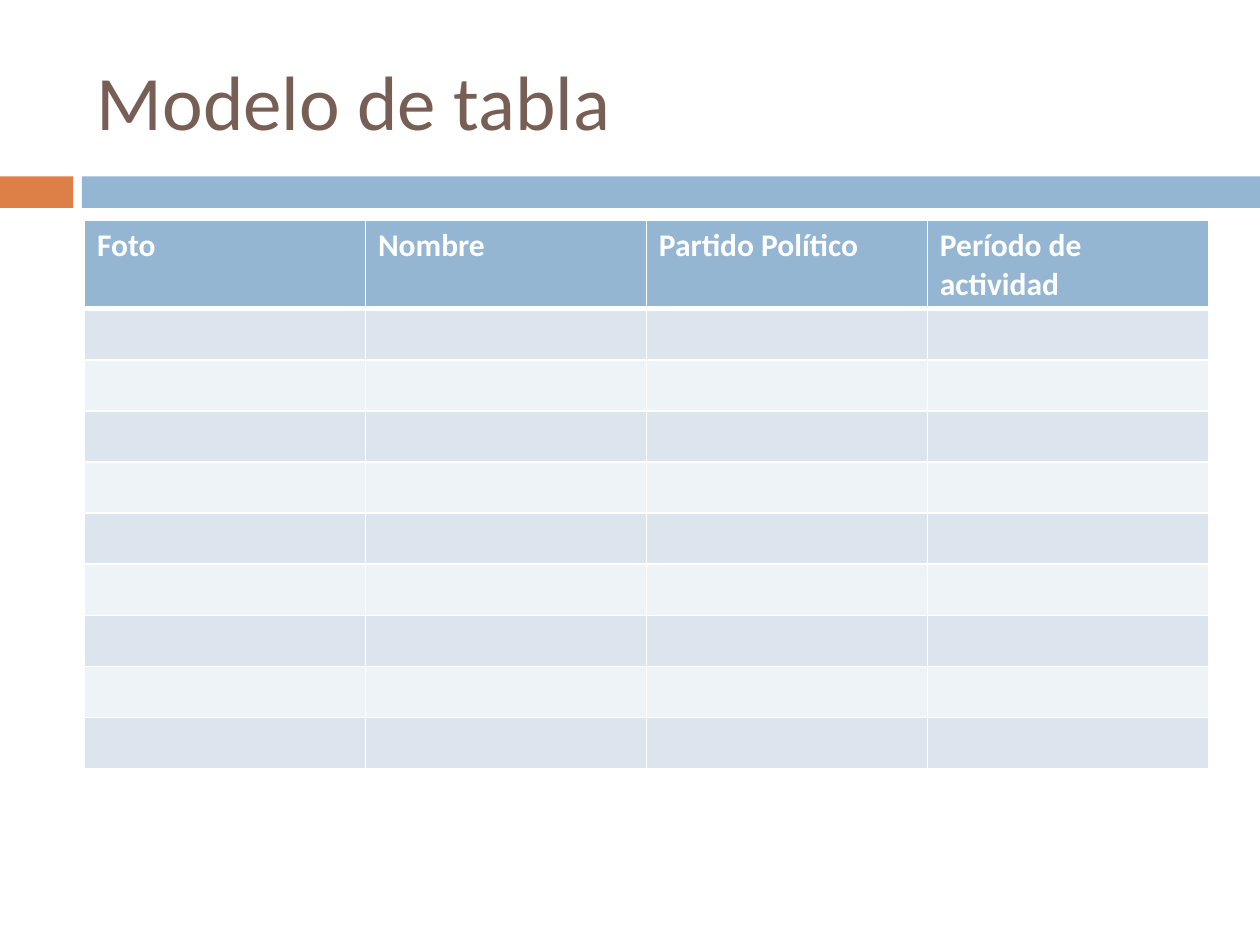
from lxml.etree import SubElement
from pptx import Presentation
from pptx.dml.color import RGBColor
from pptx.enum.shapes import MSO_SHAPE
from pptx.enum.text import MSO_ANCHOR
from pptx.oxml.ns import qn
from pptx.util import Inches, Pt

COLORS = {
    "accent": "DD8047",
    "band": "94B6D2",
    "title": "775F55",
    "white": "FFFFFF",
    "odd_row": "DCE5EE",
    "even_row": "EEF3F7",
}
FONT = "Calibri"
WIDTH, HEIGHT = 10, 7.5

# Shared grid, in inches
LEFT, CONTENT_WIDTH = 0.67, 8.92
BAND_TOP, BAND_HEIGHT = 1.4, 0.25
HEADERS = ["Foto", "Nombre", "Partido Político", "Período de actividad"]
BODY_ROWS = 9
ROW_HEIGHT = 3.65 / BODY_ROWS


def color(name):
    return RGBColor.from_string(COLORS[name])


def write_text(frame, text, size, ink, bold=False, anchor=MSO_ANCHOR.TOP):
    frame.word_wrap = True
    frame.vertical_anchor = anchor
    span = frame.paragraphs[0].add_run()
    span.text = text
    span.font.name = FONT
    span.font.size = Pt(size)
    span.font.bold = bold
    span.font.color.rgb = color(ink)


def add_bar(page, left, width, fill):
    bar = page.shapes.add_shape(
        MSO_SHAPE.RECTANGLE,
        Inches(left), Inches(BAND_TOP), Inches(width), Inches(BAND_HEIGHT))
    bar.shadow.inherit = False
    bar.fill.solid()
    bar.fill.fore_color.rgb = color(fill)
    bar.line.fill.background()


def add_title(page, text):
    box = page.shapes.add_textbox(
        Inches(LEFT), Inches(0.25), Inches(CONTENT_WIDTH), Inches(1.08))
    write_text(box.text_frame, text, size=44, ink="title", anchor=MSO_ANCHOR.MIDDLE)


def style_cell(cell, fill, top=1, bottom=1):
    # Borders come before the fill in the cell properties
    properties = cell._tc.get_or_add_tcPr()
    for side, points in (("L", 1), ("R", 1), ("T", top), ("B", bottom)):
        line = SubElement(properties, qn(f"a:ln{side}"), w=str(Pt(points)))
        paint = SubElement(line, qn("a:solidFill"))
        SubElement(paint, qn("a:srgbClr"), val=COLORS["white"])
    cell.fill.solid()
    cell.fill.fore_color.rgb = color(fill)


def add_table(page):
    row_count = BODY_ROWS + 1
    table = page.shapes.add_table(
        row_count, len(HEADERS), Inches(LEFT), Inches(1.75),
        Inches(CONTENT_WIDTH), Inches(ROW_HEIGHT * row_count)).table

    # Header row, with a thick rule below
    for column, label in enumerate(HEADERS):
        cell = table.cell(0, column)
        style_cell(cell, "band", bottom=3)
        write_text(cell.text_frame, label, size=18, ink="white", bold=True)

    # Empty body rows in alternating tints
    for row in range(1, row_count):
        for column in range(len(HEADERS)):
            style_cell(table.cell(row, column),
                       "odd_row" if row % 2 else "even_row",
                       top=3 if row == 1 else 1)


def main():
    deck = Presentation()
    deck.slide_width, deck.slide_height = Inches(WIDTH), Inches(HEIGHT)
    page = deck.slides.add_slide(deck.slide_layouts[6])

    # Band under the title
    add_bar(page, 0, 0.58, "accent")
    add_bar(page, 0.65, WIDTH - 0.65, "band")

    add_title(page, "Modelo de tabla")
    add_table(page)
    deck.save("out.pptx")


if __name__ == "__main__":
    main()
